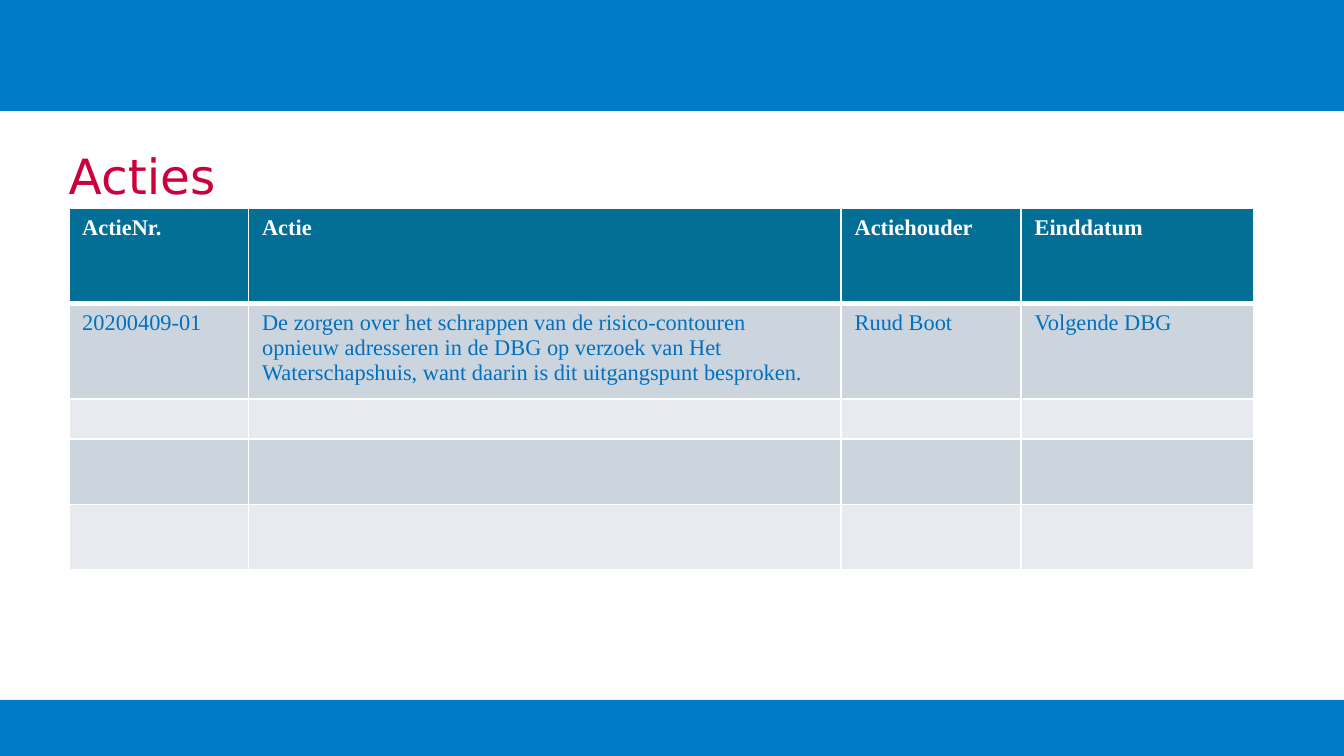
from lxml.etree import SubElement as Sub
from pptx import Presentation
from pptx.dml.color import RGBColor as Rgb
from pptx.enum.shapes import MSO_SHAPE as Shape
from pptx.enum.text import MSO_ANCHOR as Anchor
from pptx.oxml.ns import qn
from pptx.util import Cm, Pt

COLOURS = {
    "band": "007BC7",
    "title": "CC003D",
    "header": "046F96",
    "odd": "CCD5DD",
    "even": "E7EBEF",
    "body": "0070C0",
    "white": "FFFFFF",
}


class ActionSlide:
    title_font = "DejaVu Sans"
    table_font = "Times New Roman"
    title_size = Pt(26)
    table_size = Pt(12)

    def __init__(self, slide):
        self.slide = slide

    def colour(self, name):
        return Rgb.from_string(COLOURS[name])

    def set_text(self, paragraph, text, font, size, colour, bold=False):
        paragraph.text = text
        paragraph.font.name = font
        paragraph.font.size = size
        paragraph.font.bold = bold
        paragraph.font.color.rgb = self.colour(colour)

    def band(self, top, width, height):
        band = self.slide.shapes.add_shape(Shape.RECTANGLE, 0, top, width, height)
        band.shadow.inherit = False
        band.fill.solid()
        band.fill.fore_color.rgb = self.colour("band")
        band.line.fill.background()

    def title(self, text, left, top, width, height):
        frame = self.slide.shapes.add_textbox(left, top, width, height).text_frame
        frame.word_wrap = True
        frame.vertical_anchor = Anchor.MIDDLE
        frame.margin_left = frame.margin_right = 0
        frame.margin_top = frame.margin_bottom = 0
        self.set_text(frame.paragraphs[0], text, self.title_font, self.title_size, "title")

    def border(self, cell, side, points):
        edge = Sub(cell._tc.get_or_add_tcPr(), qn(f"a:ln{side}"), w=str(Pt(points)))
        fill = Sub(edge, qn("a:solidFill"))
        Sub(fill, qn("a:srgbClr"), val=COLOURS["white"])

    def cell(self, cell, text, row):
        header = row == 0
        for side in "LRTB":
            thick = (header and side == "B") or (row == 1 and side == "T")
            self.border(cell, side, 3 if thick else 1)
        cell.fill.solid()
        shade = "header" if header else ("even", "odd")[row % 2]
        cell.fill.fore_color.rgb = self.colour(shade)
        paragraph = cell.text_frame.paragraphs[0]
        ink = "white" if header else "body"
        self.set_text(paragraph, text, self.table_font, self.table_size, ink, header)
        if not text:
            paragraph._p.get_or_add_endParaRPr().set("sz", "1200")

    def table(self, left, top, widths, heights, records):
        table = self.slide.shapes.add_table(
            len(heights), len(widths), left, top, sum(widths), sum(heights)
        ).table
        for column, width in zip(table.columns, widths):
            column.width = width
        for row, height in enumerate(heights):
            table.rows[row].height = height
            texts = records[row] if row < len(records) else [""] * len(widths)
            for column, text in enumerate(texts):
                self.cell(table.cell(row, column), text, row)


def main():
    deck = Presentation()
    deck.slide_width, deck.slide_height = Cm(25.4), Cm(14.29)
    actions = ActionSlide(deck.slides.add_slide(deck.slide_layouts[6]))

    actions.band(0, deck.slide_width, Cm(2.1))
    actions.band(Cm(13.23), deck.slide_width, Cm(1.06))
    margin = Cm(1.3)
    actions.title("Acties", margin, Cm(2.8), Cm(23.34), Cm(1.02))

    records = [
        ["ActieNr.", "Actie", "Actiehouder", "Einddatum"],
        [
            "20200409-01",
            "De zorgen over het schrappen van de risico-contouren opnieuw "
            "adresseren in de DBG op verzoek van Het Waterschapshuis, want "
            "daarin is dit uitgangspunt besproken.",
            "Ruud Boot",
            "Volgende DBG",
        ],
    ]
    widths = [Cm(width) for width in (3.4, 11.2, 3.4, 4.39)]
    heights = [Cm(height) for height in (1.8, 1.8, 0.76, 1.23, 1.23)]
    actions.table(margin, Cm(3.94), widths, heights, records)

    deck.save("out.pptx")


if __name__ == "__main__":
    main()
